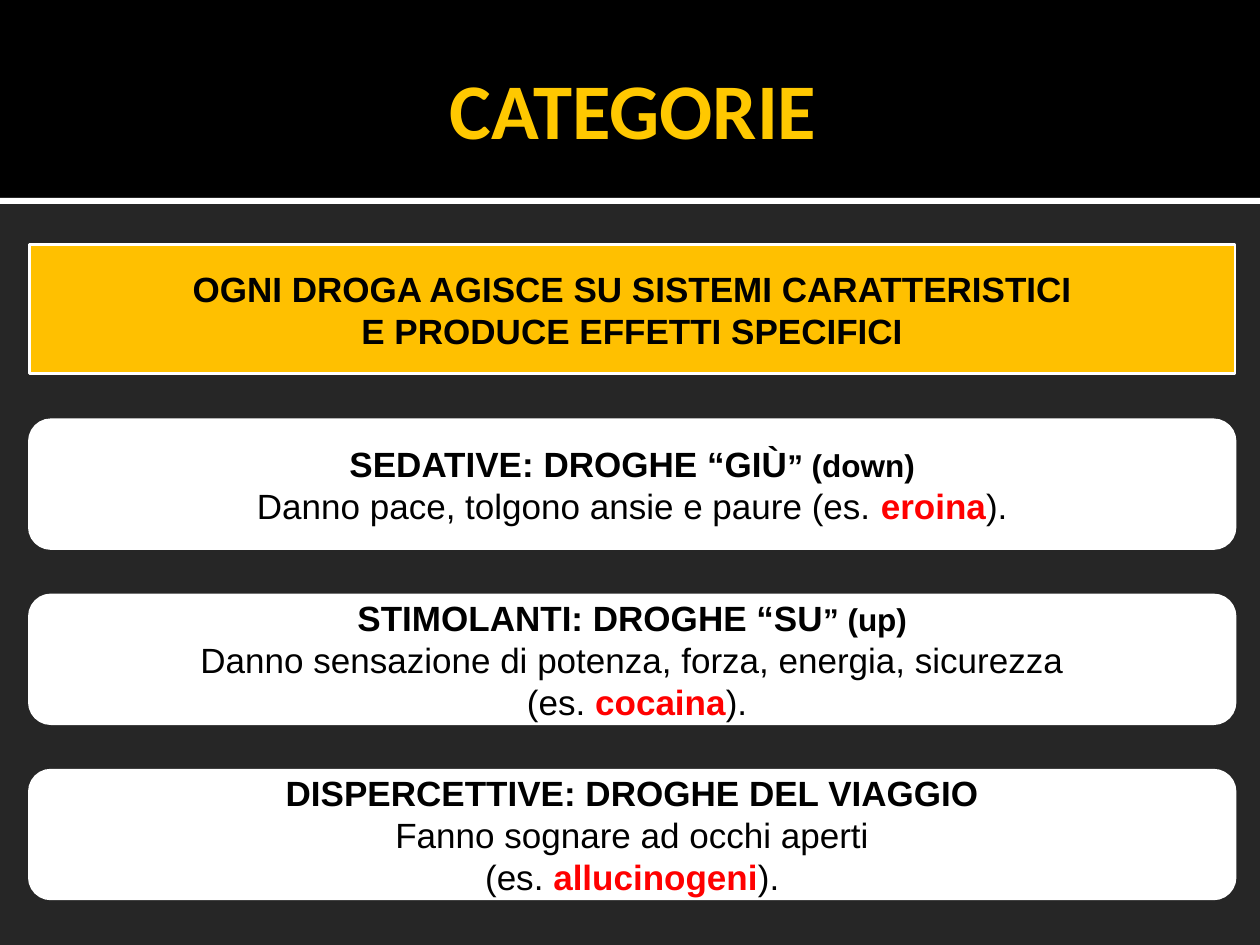
from dataclasses import dataclass

from pptx import Presentation
from pptx.dml.color import RGBColor
from pptx.enum.shapes import MSO_SHAPE
from pptx.enum.text import MSO_ANCHOR, PP_ALIGN
from pptx.util import Pt

COLORS = {
    "ground": "262626",
    "black": "000000",
    "white": "FFFFFF",
    "amber": "FFC000",
    "title": "FFC800",
    "red": "FF0000",
}


@dataclass
class Span:
    text: str
    bold: bool = False
    size: float = 20
    color: str = "black"


@dataclass
class Box:
    lines: list[list[Span]]
    fill: str = "white"
    kind: MSO_SHAPE = MSO_SHAPE.ROUNDED_RECTANGLE


def rgb(name: str) -> RGBColor:
    return RGBColor.from_string(COLORS[name])


def example(drug: str, before: str = "(es. ") -> list[Span]:
    return [Span(before), Span(drug, True, color="red"), Span(").")]


def add_block(s, kind, left: float, top: float, width: float, height: float, fill: str):
    sp = s.shapes.add_shape(kind, Pt(left), Pt(top), Pt(width), Pt(height))
    sp.shadow.inherit = False
    sp.fill.solid()
    sp.fill.fore_color.rgb = rgb(fill)
    sp.line.fill.background()
    return sp


def style_run(r, font: str, size: float, bold: bool, color: str) -> None:
    r.font.name = font
    r.font.size = Pt(size)
    r.font.bold = bold
    r.font.color.rgb = rgb(color)


def add_box(s, box: Box, top: float) -> None:
    sp = add_block(s, box.kind, BOX_LEFT, top, BOX_WIDTH, BOX_HEIGHT, box.fill)
    sp.line.color.rgb = rgb("white")
    sp.line.width = Pt(1.5)
    tf = sp.text_frame
    tf.word_wrap = False
    tf.vertical_anchor = MSO_ANCHOR.MIDDLE
    for i, line in enumerate(box.lines):
        p = tf.paragraphs[0] if i == 0 else tf.add_paragraph()
        p.alignment = PP_ALIGN.CENTER
        for span in line:
            r = p.add_run()
            r.text = span.text
            style_run(r, "Arial", span.size, span.bold, span.color)


WIDTH, HEIGHT = 720, 540
BAND_HEIGHT, RULE_HEIGHT = 113, 3.6
BOX_LEFT, BOX_WIDTH, BOX_HEIGHT = 16.8, 689, 73.6
FIRST_TOP, PITCH = 139.8, 100.1

BOXES = [
    Box([[Span("OGNI DROGA AGISCE SU SISTEMI CARATTERISTICI", True)],
         [Span("E PRODUCE EFFETTI SPECIFICI", True)]],
        "amber", MSO_SHAPE.RECTANGLE),
    Box([[Span("SEDATIVE: DROGHE “GIÙ", True), Span("” (down)", True, 18)],
         example("eroina", "Danno pace, tolgono ansie e paure (es. ")]),
    Box([[Span("STIMOLANTI: DROGHE “SU", True), Span("” (up)", True, 18)],
         [Span("Danno sensazione di potenza, forza, energia, sicurezza")],
         example("cocaina", " (es. ")]),
    Box([[Span("DISPERCETTIVE: DROGHE DEL VIAGGIO", True)],
         [Span("Fanno sognare ad occhi aperti")],
         example("allucinogeni")]),
]


def main() -> None:
    prs = Presentation()
    prs.slide_width, prs.slide_height = Pt(WIDTH), Pt(HEIGHT)
    s = prs.slides.add_slide(prs.slide_layouts[5])
    s.background.fill.solid()
    s.background.fill.fore_color.rgb = rgb("ground")

    # Header band and rule
    add_block(s, MSO_SHAPE.RECTANGLE, 0, BAND_HEIGHT, WIDTH, RULE_HEIGHT, "white")
    add_block(s, MSO_SHAPE.RECTANGLE, 0, 0, WIDTH, BAND_HEIGHT, "black")

    # Boxes at equal steps
    for i, box in enumerate(BOXES):
        add_box(s, box, FIRST_TOP + i * PITCH)

    # Title, brought in front of the band
    title = s.shapes.title
    title.left, title.top, title.width, title.height = Pt(36), Pt(12.2), Pt(648), Pt(98.6)
    tf = title.text_frame
    tf.text = "CATEGORIE"
    tf.vertical_anchor = MSO_ANCHOR.MIDDLE
    tf.margin_left = Pt(7.2)
    tf.margin_right = tf.margin_top = tf.margin_bottom = Pt(3.6)
    p = tf.paragraphs[0]
    p.alignment = PP_ALIGN.CENTER
    style_run(p.runs[0], "Calibri", 45, True, "title")
    title.element.getparent().append(title.element)

    prs.save("out.pptx")


if __name__ == "__main__":
    main()
